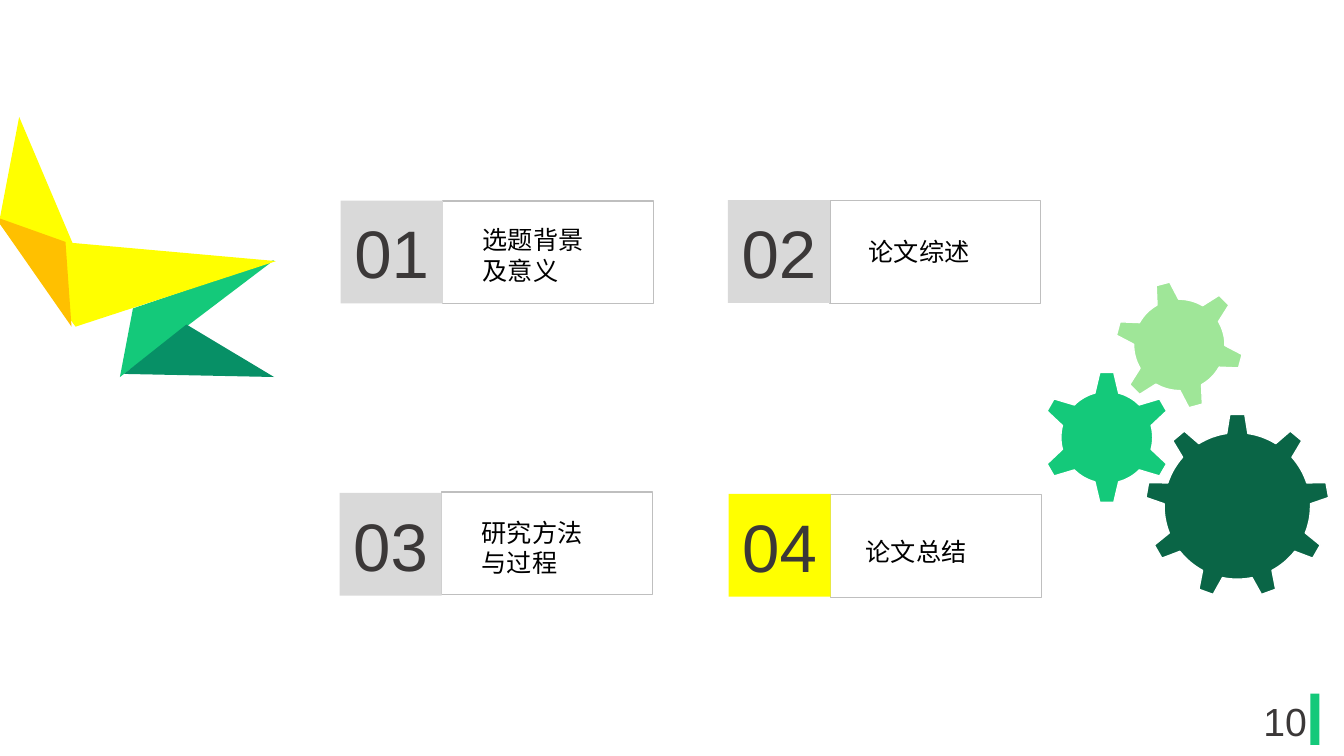
from math import cos, hypot, atan2, pi, radians, sin

from pptx import Presentation
from pptx.dml.color import RGBColor
from pptx.enum.shapes import MSO_SHAPE
from pptx.enum.text import MSO_ANCHOR, PP_ALIGN
from pptx.util import Pt

RECTANGLE = MSO_SHAPE.RECTANGLE
TOP, MIDDLE = MSO_ANCHOR.TOP, MSO_ANCHOR.MIDDLE
LEFT, CENTER = PP_ALIGN.LEFT, PP_ALIGN.CENTER

BLACK = RGBColor(0x00, 0x00, 0x00)
WHITE = RGBColor(0xFF, 0xFF, 0xFF)
CHARCOAL = RGBColor(0x3B, 0x38, 0x38)
FRAME_GRAY = RGBColor(0xBF, 0xBF, 0xBF)
TILE_GRAY = RGBColor(0xD9, 0xD9, 0xD9)
YELLOW = RGBColor(0xFF, 0xFF, 0x00)
AMBER = RGBColor(0xFF, 0xC0, 0x00)
GREEN = RGBColor(0x14, 0xC9, 0x7A)
TEAL = RGBColor(0x07, 0x90, 0x66)
FOREST = RGBColor(0x0A, 0x65, 0x46)
PALE_GREEN = RGBColor(0x9F, 0xE6, 0x98)

FONT = "Arial"
TILE_WIDTH, FRAME_WIDTH, CARD_HEIGHT = 72.9, 150.5, 73.4
TITLE_WIDTH = 108.7
ARC_STEPS = 8

# number, tile colour, tile corner, frame top, title corner, title lines
CARDS = [
    ("01", TILE_GRAY, (243.4, 143.3), 143.6, (337.7, 157), ("选题背景", "及意义")),
    ("02", TILE_GRAY, (520, 142.9), 143.3, (613.4, 164.9), ("论文综述",)),
    ("03", TILE_GRAY, (242.6, 352.1), 351.4, (337, 365.8), ("研究方法", "与过程")),
    ("04", YELLOW, (520.4, 352.8), 353.3, (611.3, 379.4), ("论文总结",)),
]

BIRD_FACETS = [
    (GREEN, [(195.8, 185.8), (85.7, 269.3), (95, 220.3)]),
    (YELLOW, [(197.3, 186.5), (54, 233.3), (-0.7, 159.1), (13.7, 83.5), (51.8, 173.5)]),
    (TEAL, [(88.6, 267.1), (195.8, 269.3), (133.2, 231.8)]),
    (AMBER, [(46.8, 172.8), (51.1, 233.3), (-3.6, 154.8)]),
]

# colour, centre, teeth, tilt, body radius, tip radius, half widths at root and tip
GEARS = [
    (FOREST, (883.8, 361.4), 9, 0, 52.3, 65.3, 7.6, 5.4),
    (GREEN, (790.6, 312.5), 6, 0, 32.8, 46.4, 8.6, 5),
    (PALE_GREEN, (842.4, 246.4), 6, -15, 32.6, 45.4, 8.1, 5),
]


def paint(shape, fill=None, line=None):
    """Set the fill and one-point outline of a shape, or remove them."""
    shape.shadow.inherit = False
    if fill is None:
        shape.fill.background()
    else:
        shape.fill.solid()
        shape.fill.fore_color.rgb = fill
    if line is None:
        shape.line.fill.background()
    else:
        shape.line.color.rgb = line
        shape.line.width = Pt(1)


def write(shape, lines, size=18, color=BLACK, align=LEFT, anchor=TOP):
    """Write one paragraph per line into a shape."""
    frame = shape.text_frame
    frame.word_wrap = True
    frame.vertical_anchor = anchor
    frame.text = "\n".join(lines)
    for paragraph in frame.paragraphs:
        paragraph.alignment = align
        paragraph.font.name = FONT
        paragraph.font.size = Pt(size)
        paragraph.font.color.rgb = color


def add_box(shapes, left, top, width, height, fill=None, line=None):
    """Add a rectangle and return it."""
    box = shapes.add_shape(RECTANGLE, Pt(left), Pt(top), Pt(width), Pt(height))
    paint(box, fill, line)
    return box


def add_label(shapes, left, top, width, height, lines, **style):
    """Add a text box with formatted lines."""
    label = shapes.add_textbox(Pt(left), Pt(top), Pt(width), Pt(height))
    write(label, lines, **style)


def add_polygon(shapes, points, fill, line=None):
    """Add a closed polygon through the given points."""
    corners = [(Pt(x), Pt(y)) for x, y in points]
    builder = shapes.build_freeform(*corners[0])
    builder.add_line_segments(corners[1:], close=True)
    paint(builder.convert_to_shape(), fill, line)


def add_card(slide, number, tile_color, tile_corner, frame_top, title_corner, title):
    """Add a grouped agenda card: frame, numbered tile and title."""
    card = slide.shapes.add_group_shape().shapes
    left, top = tile_corner
    add_box(card, left + TILE_WIDTH, frame_top, FRAME_WIDTH, CARD_HEIGHT, line=FRAME_GRAY)
    tile = add_box(card, left, top, TILE_WIDTH, CARD_HEIGHT, fill=tile_color)
    write(tile, [number], size=48, color=CHARCOAL, align=CENTER, anchor=MIDDLE)
    add_label(card, *title_corner, TITLE_WIDTH, 6 + 22.5 * len(title), title)


def gear_outline(center, teeth, tilt, body, tip, root_half, tip_half):
    """Return the points of a gear with evenly spaced tapered teeth."""
    pitch = 2 * pi / teeth
    root_angle, tip_angle = root_half / body, atan2(tip_half, tip)
    tip_radius = hypot(tip, tip_half) if tilt == 0 else tip
    polar = []
    for tooth in range(teeth):
        axis = radians(tilt - 90) + tooth * pitch
        polar += [(tip_radius, axis - tip_angle), (tip_radius, axis + tip_angle)]
        gap = pitch - 2 * root_angle
        polar += [(body, axis + root_angle + gap * step / ARC_STEPS)
                  for step in range(ARC_STEPS + 1)]
    x, y = center
    return [(x + r * cos(angle), y + r * sin(angle)) for r, angle in polar]


def main():
    """Build the agenda slide and save it."""
    deck = Presentation()
    deck.slide_width, deck.slide_height = Pt(960), Pt(540)
    slide = deck.slides.add_slide(deck.slide_layouts[6])

    add_box(slide.shapes, 936, 495.4, 6.5, 36.7, fill=GREEN)
    for card in CARDS:
        add_card(slide, *card)
    add_label(slide.shapes, 890.6, 500.4, 54.7, 28.8, ["10"],
              size=28, color=CHARCOAL, align=CENTER, anchor=MIDDLE)

    bird = slide.shapes.add_group_shape().shapes
    for color, points in BIRD_FACETS:
        add_polygon(bird, points, color)

    gears = slide.shapes.add_group_shape().shapes
    for color, *geometry in GEARS:
        add_polygon(gears, gear_outline(*geometry), color, line=WHITE)

    deck.save("out.pptx")


if __name__ == "__main__":
    main()
